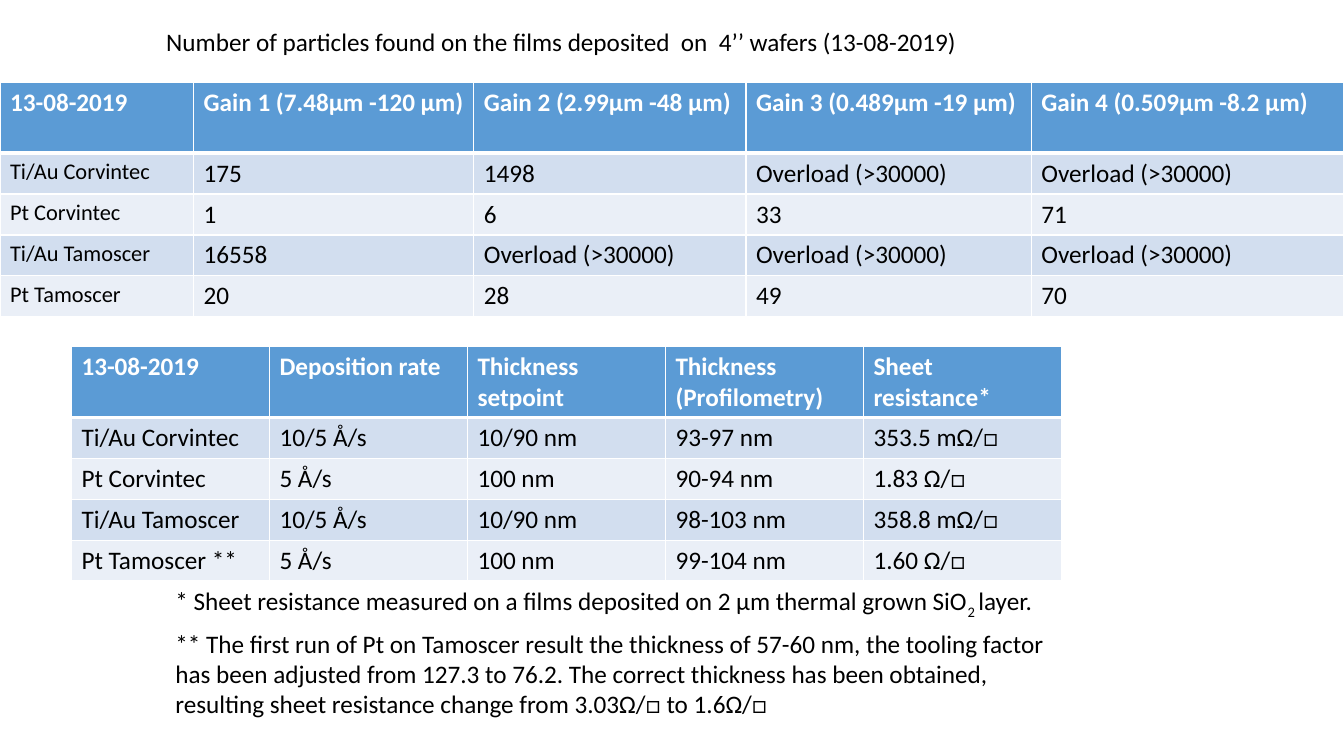
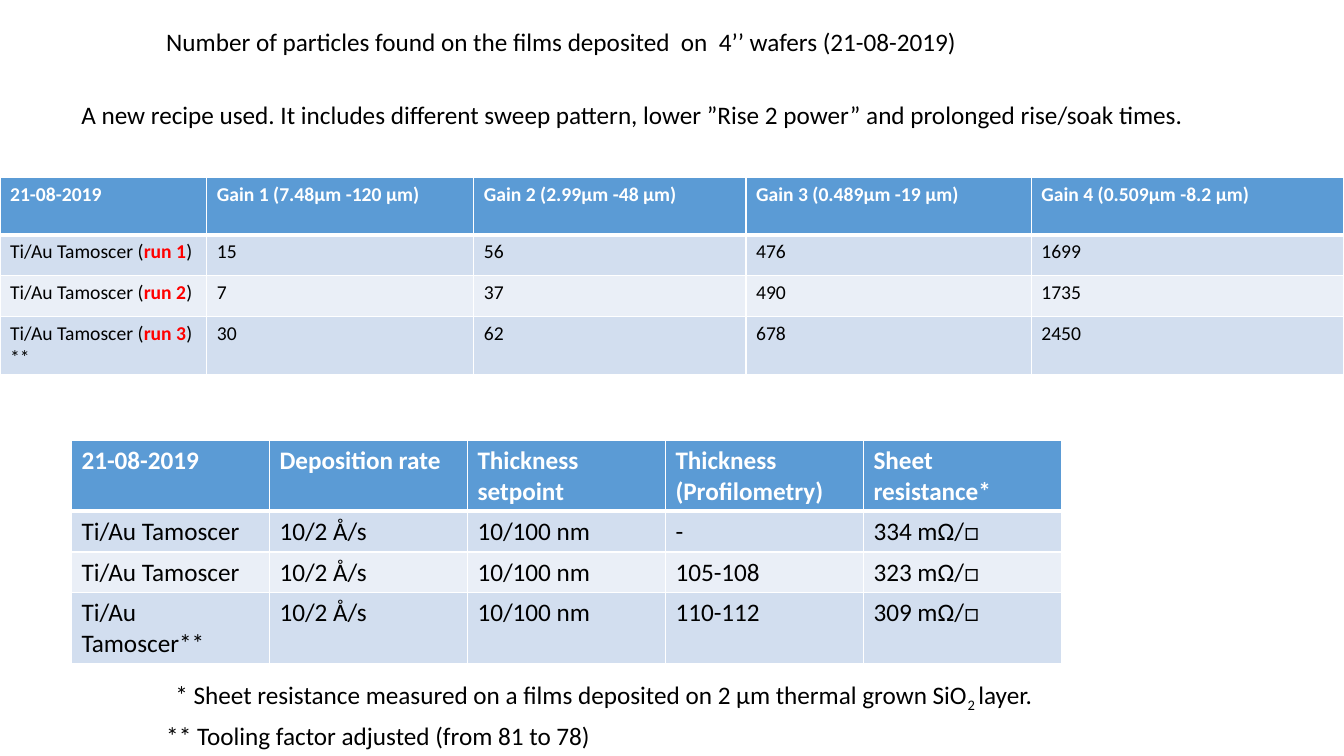
import pptx
import pptx.dml.color
import pptx.enum.text
import pptx.oxml
import pptx.oxml.ns
import pptx.util
from lxml import etree

Cm = pptx.util.Cm

FONT = "Calibri"
BLACK, WHITE, RED = "000000", "FFFFFF", "FF0000"
HEADER_FILL, BAND_FILLS = "5B9BD5", ("D2DEEF", "EAEFF7")
ROW, TALL_ROW, SMALL_TALL_ROW = 1.03, 1.78, 1.45
SLIDE_WIDTH, SLIDE_HEIGHT = 33.87, 19.05
GAIN_EDGES = (11.94, 18.8, 25.99, SLIDE_WIDTH)
FILM_WIDTHS = [4.99] * 5

TITLE = "Number of particles found on the films deposited  on  4’’ wafers ({})"
GAINS = ["Gain 1 (7.48µm -120 µm)", "Gain 2 (2.99µm -48 µm)",
         "Gain 3 (0.489µm -19 µm)", "Gain 4 (0.509µm -8.2 µm)"]
FILM_HEADS = ["Deposition rate", "Thickness setpoint",
              "Thickness (Profilometry)", "Sheet resistance*"]
RESISTANCE_NOTE = [
    "* Sheet resistance measured on a films deposited on 2 µm thermal grown SiO",
    ("2 ", {"baseline": -25000}), "layer."]
OVERLOAD = "Overload (>30000)"


def run_label(number, ending=")"):
    """Return the row label of one numbered run."""
    return ["Ti/Au Tamoscer (", (f"run {number}", {"color": RED, "bold": True}), ending]


REPORTS = [
    {
        "date": "13-08-2019",
        "particles": {
            "top": 2.08, "first_width": 4.88, "size": 18, "label_size": 16,
            "heights": [TALL_ROW] + [ROW] * 4,
            "rows": [
                ["Ti/Au Corvintec", "175", "1498", OVERLOAD, OVERLOAD],
                ["Pt Corvintec", "1", "6", "33", "71"],
                ["Ti/Au Tamoscer", "16558", OVERLOAD, OVERLOAD, OVERLOAD],
                ["Pt Tamoscer", "20", "28", "49", "70"],
            ],
        },
        "films": {
            "top": 8.74, "heights": [TALL_ROW] + [ROW] * 4,
            "rows": [
                ["Ti/Au Corvintec", "10/5 Å/s", "10/90 nm", "93-97 nm", "353.5 mΩ/□"],
                ["Pt Corvintec", "5 Å/s", "100 nm", "90-94 nm", "1.83 Ω/□"],
                ["Ti/Au Tamoscer", "10/5 Å/s", "10/90 nm", "98-103 nm", "358.8 mΩ/□"],
                ["Pt Tamoscer **", "5 Å/s", "100 nm", "99-104 nm", "1.60 Ω/□"],
            ],
        },
        "notes": [
            (RESISTANCE_NOTE, (4.17, 14.63, 22.45, 1.03), False),
            ("** The first run of Pt on Tamoscer result the thickness of 57-60 nm, "
             "the tooling factor has been adjusted from 127.3 to 76.2. The correct "
             "thickness has been obtained, resulting sheet resistance change from "
             "3.03Ω/□ to 1.6Ω/□", (4.17, 15.7, 22.58, 2.57), True),
        ],
    },
    {
        "date": "21-08-2019",
        "particles": {
            "top": 4.47, "first_width": 5.21, "size": 14, "label_size": 14,
            "heights": [SMALL_TALL_ROW, ROW, ROW, SMALL_TALL_ROW],
            "rows": [
                [run_label(1), "15", "56", "476", "1699"],
                [run_label(2), "7", "37", "490", "1735"],
                [run_label(3, ") **"), "30", "62", "678", "2450"],
            ],
        },
        "films": {
            "top": 11.1, "heights": [TALL_ROW, ROW, ROW, TALL_ROW],
            "rows": [
                ["Ti/Au Tamoscer", "10/2 Å/s", "10/100 nm", "-", "334 mΩ/□"],
                ["Ti/Au Tamoscer", "10/2 Å/s", "10/100 nm", "105-108", "323 mΩ/□"],
                ["Ti/Au Tamoscer**", "10/2 Å/s", "10/100 nm", "110-112", "309 mΩ/□"],
            ],
        },
        "notes": [
            (RESISTANCE_NOTE, (4.17, 16.99, 22.45, 1.03), False),
            ("** Tooling factor adjusted (from 81 to 78)", (3.94, 18.03, 22.58, 1.03), True),
            ("A new recipe used. It includes different sweep pattern, lower "
             "”Rise 2 power” and prolonged rise/soak times.", (1.8, 2.39, 28.65, 1.03), False),
        ],
    },
]


def rgb(value):
    """Turn a hex string into a colour."""
    return pptx.dml.color.RGBColor.from_string(value)


def write(frame, content, size=18, color=BLACK, bold=False):
    """Write a string, or a list of strings and (string, format) pairs."""
    for part in [content] if isinstance(content, str) else content:
        text, special = (part, {}) if isinstance(part, str) else part
        run = frame.paragraphs[0].add_run()
        run.text = text
        run.font.name = FONT
        run.font.size = pptx.util.Pt(size)
        run.font.bold = special.get("bold", bold)
        run.font.color.rgb = rgb(special.get("color", color))
        if "baseline" in special:
            run.font._element.set("baseline", str(special["baseline"]))


def add_text(slide, content, place, wrap):
    """Add a text box that grows with its text."""
    frame = slide.shapes.add_textbox(*map(Cm, place)).text_frame
    frame.word_wrap = wrap
    frame.auto_size = pptx.enum.text.MSO_AUTO_SIZE.SHAPE_TO_FIT_TEXT
    write(frame, content)


def add_borders(cell, top, bottom):
    """Draw white lines round a cell, with top and bottom widths in points."""
    properties = cell._tc.get_or_add_tcPr()
    widths = {"lnL": 1, "lnR": 1, "lnT": top, "lnB": bottom}
    for position, (side, width) in enumerate(widths.items()):
        line = etree.Element(pptx.oxml.ns.qn(f"a:{side}"), w=str(pptx.util.Pt(width)))
        fill = etree.SubElement(line, pptx.oxml.ns.qn("a:solidFill"))
        etree.SubElement(fill, pptx.oxml.ns.qn("a:srgbClr"), val=WHITE)
        properties.insert(position, line)


def add_grid(slide, left, top, widths, heights, rows, size=18, label_size=18):
    """Add a banded table whose first row is the header."""
    grid = slide.shapes.add_table(len(rows), len(widths), Cm(left), Cm(top),
                                  Cm(sum(widths)), Cm(sum(heights))).table
    for column, width in zip(grid.columns, widths):
        column.width = Cm(width)
    for r, (row, height, contents) in enumerate(zip(grid.rows, heights, rows)):
        row.height = Cm(height)
        header = r == 0
        for c, (cell, content) in enumerate(zip(row.cells, contents)):
            cell.fill.solid()
            cell.fill.fore_color.rgb = rgb(HEADER_FILL if header else BAND_FILLS[(r - 1) % 2])
            add_borders(cell, top=3 if r == 1 else 1, bottom=3 if header else 1)
            write(cell.text_frame, content, bold=header,
                  size=label_size if c == 0 and not header else size,
                  color=WHITE if header else BLACK)


def add_report(deck, report):
    """Add the slide of one measuring date."""
    slide = deck.slides.add_slide(deck.slide_layouts[6])
    date, particles, films = report["date"], report["particles"], report["films"]
    edges = (0, particles["first_width"], *GAIN_EDGES)
    gain_widths = [right - left for left, right in zip(edges, edges[1:])]
    add_grid(slide, 0, particles["top"], gain_widths, particles["heights"],
             [[date, *GAINS], *particles["rows"]],
             size=particles["size"], label_size=particles["label_size"])
    add_text(slide, TITLE.format(date), (3.94, 0.53, 20.68, 1.03), False)
    add_grid(slide, 1.8, films["top"], FILM_WIDTHS, films["heights"],
             [[date, *FILM_HEADS], *films["rows"]])
    for note, place, wrap in report["notes"]:
        add_text(slide, note, place, wrap)


def main():
    """Build and save the deck."""
    deck = pptx.Presentation()
    deck.slide_width, deck.slide_height = Cm(SLIDE_WIDTH), Cm(SLIDE_HEIGHT)
    for report in REPORTS:
        add_report(deck, report)
    deck.save("out.pptx")


if __name__ == "__main__":
    main()
